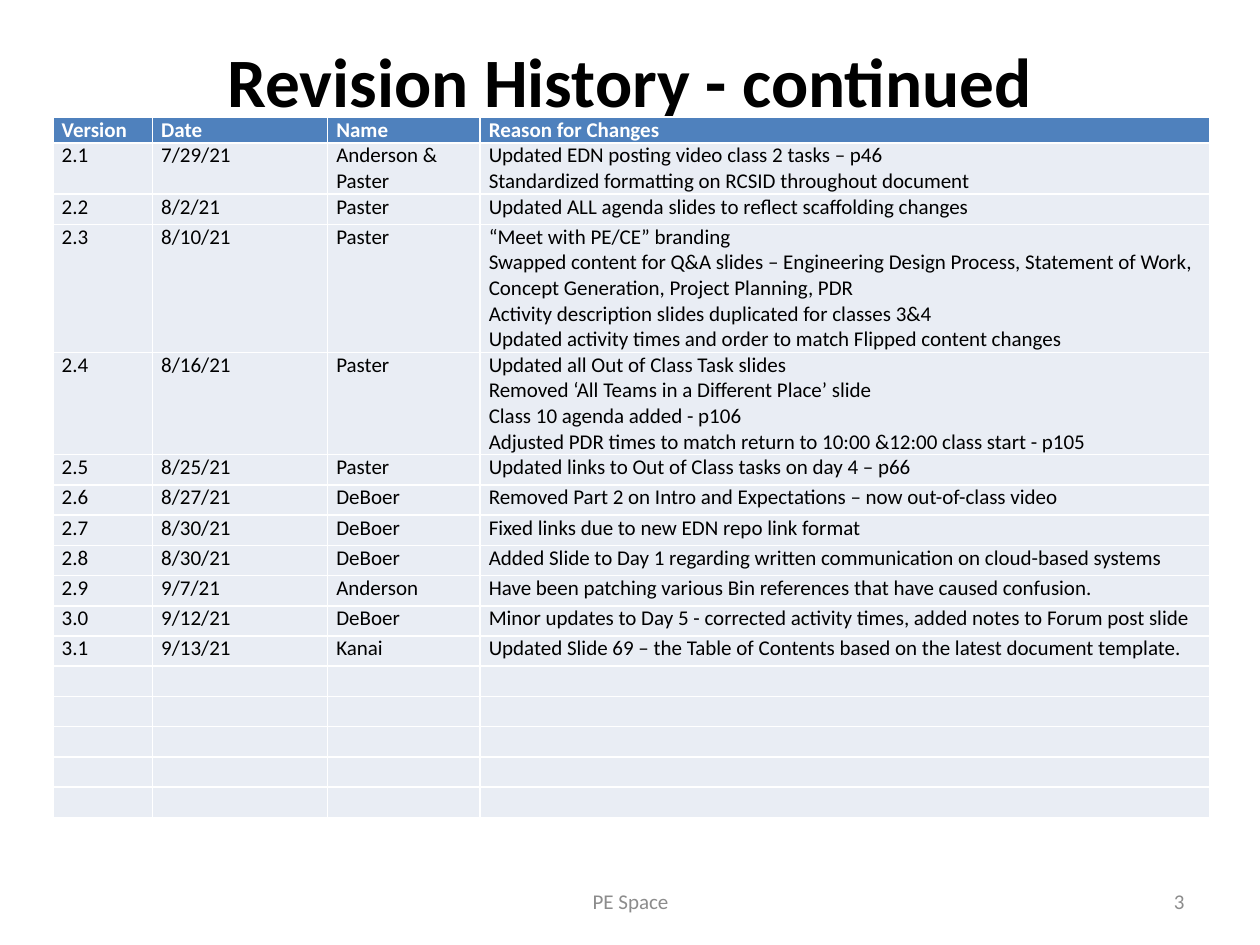
from lxml.etree import SubElement
from pptx import Presentation
from pptx.dml.color import RGBColor
from pptx.enum.text import MSO_ANCHOR, PP_ALIGN
from pptx.oxml.ns import qn
from pptx.util import Inches, Pt

TITLE = "Revision History - continued"
HEADERS = ("Version", "Date", "Name", "Reason for Changes")
REVISIONS = [
    ("2.1", "7/29/21", "Anderson & Paster", [
        "Updated EDN posting video class 2 tasks – p46",
        "Standardized formatting on RCSID throughout document"]),
    ("2.2", "8/2/21", "Paster", ["Updated ALL agenda slides to reflect scaffolding changes"]),
    ("2.3", "8/10/21", "Paster", [
        "“Meet with PE/CE” branding",
        "Swapped content for Q&A slides – Engineering Design Process, Statement of Work, "
        "Concept Generation, Project Planning, PDR",
        "Activity description slides duplicated for classes 3&4",
        "Updated activity times and order to match Flipped content changes"]),
    ("2.4", "8/16/21", "Paster", [
        "Updated all Out of Class Task slides",
        "Removed ‘All Teams in a Different Place’ slide",
        "Class 10 agenda added - p106",
        "Adjusted PDR times to match return to 10:00 &12:00 class start - p105"]),
    ("2.5", "8/25/21", "Paster", ["Updated links to Out of Class tasks on day 4 – p66"]),
    ("2.6", "8/27/21", "DeBoer", [
        "Removed Part 2 on Intro and Expectations – now out-of-class video"]),
    ("2.7", "8/30/21", "DeBoer", ["Fixed links due to new EDN repo link format"]),
    ("2.8", "8/30/21", "DeBoer", [
        "Added Slide to Day 1 regarding written communication on cloud-based systems"]),
    ("2.9", "9/7/21", "Anderson", [
        "Have been patching various Bin references that have caused confusion."]),
    ("3.0", "9/12/21", "DeBoer", [
        "Minor updates to Day 5 - corrected activity times, added notes to Forum post slide"]),
    ("3.1", "9/13/21", "Kanai", [
        "Updated Slide 69 – the Table of Contents based on the latest document template."]),
]
EMPTY_ROWS = 5
FOOTERS = [
    ("PE Space", (3.42, 6.95, 3.17, 0.4), PP_ALIGN.CENTER),
    ("3", (7.17, 6.95, 2.33, 0.4), PP_ALIGN.RIGHT),
]

COLUMN_WIDTHS = (0.79, 1.39, 1.21, 5.79)
HEADER_HEIGHT, FIRST_ROW_HEIGHT, ROW_HEIGHT = 0.07, 0.3, 0.24
CELL_MARGINS = {"margin_left": Inches(0.07), "margin_right": Inches(0.07),
                "margin_top": 0, "margin_bottom": 0}
TITLE_FONT = {"name": "Calibri", "size": Pt(39.6), "bold": True}
HEADER_FONT = {"name": "Calibri", "size": Pt(12), "bold": True}
TEXT_FONT = {"name": "Calibri", "size": Pt(12), "bold": False}


def color(hex_value):
    return RGBColor.from_string(hex_value)


def set_attributes(target, values):
    for name, value in values.items():
        setattr(target, name, value)


def write(frame, lines, font, hex_value, alignment=PP_ALIGN.LEFT):
    """Put each line in its own paragraph with one font."""
    frame.text = "\n".join(lines)
    for paragraph in frame.paragraphs:
        paragraph.alignment = alignment
        for run in paragraph.runs:
            set_attributes(run.font, font)
            run.font.color.rgb = color(hex_value)


def set_empty_size(cell, size):
    """Keep an empty cell from taking the taller default text size."""
    end = SubElement(cell.text_frame.paragraphs[0]._p, qn("a:endParaRPr"))
    end.set("sz", str(int(size.pt * 100)))


def add_title(slide):
    title = slide.shapes.title
    set_attributes(title, {"left": Inches(0.5), "top": Inches(0.3),
                           "width": Inches(9), "height": Inches(1.25)})
    set_attributes(title.text_frame, {"vertical_anchor": MSO_ANCHOR.TOP, "margin_top": 0,
                                      "word_wrap": True})
    write(title.text_frame, [TITLE], TITLE_FONT, "000000", PP_ALIGN.CENTER)


def add_revision_table(slide):
    rows = [[[header] for header in HEADERS]]
    rows += [[[version], [date], [name], reasons] for version, date, name, reasons in REVISIONS]
    rows += [[[] for _ in HEADERS] for _ in range(EMPTY_ROWS)]
    heights = [HEADER_HEIGHT, FIRST_ROW_HEIGHT] + [ROW_HEIGHT] * (len(rows) - 2)

    table = slide.shapes.add_table(
        len(rows), len(HEADERS), Inches(0.42), Inches(0.93),
        Inches(sum(COLUMN_WIDTHS)), Inches(sum(heights))).table
    table.horz_banding = False
    for column, width in zip(table.columns, COLUMN_WIDTHS):
        column.width = Inches(width)
    for index, (row, height, contents) in enumerate(zip(table.rows, heights, rows)):
        row.height = Inches(height)
        is_header = index == 0
        for cell, lines in zip(row.cells, contents):
            set_attributes(cell, CELL_MARGINS)
            cell.fill.solid()
            cell.fill.fore_color.rgb = color("4F81BD" if is_header else "E9EDF4")
            if lines:
                write(cell.text_frame, lines, HEADER_FONT if is_header else TEXT_FONT,
                      "FFFFFF" if is_header else "000000")
            else:
                set_empty_size(cell, TEXT_FONT["size"])


def add_footers(slide):
    for text, box, alignment in FOOTERS:
        frame = slide.shapes.add_textbox(*map(Inches, box)).text_frame
        set_attributes(frame, {"word_wrap": True, "vertical_anchor": MSO_ANCHOR.MIDDLE})
        write(frame, [text], TEXT_FONT, "8C8C8C", alignment)


def main():
    presentation = Presentation()
    presentation.slide_width, presentation.slide_height = Inches(10), Inches(7.5)
    slide = presentation.slides.add_slide(presentation.slide_layouts.get_by_name("Title Only"))
    add_title(slide)
    add_revision_table(slide)
    add_footers(slide)
    presentation.save("out.pptx")


if __name__ == "__main__":
    main()
